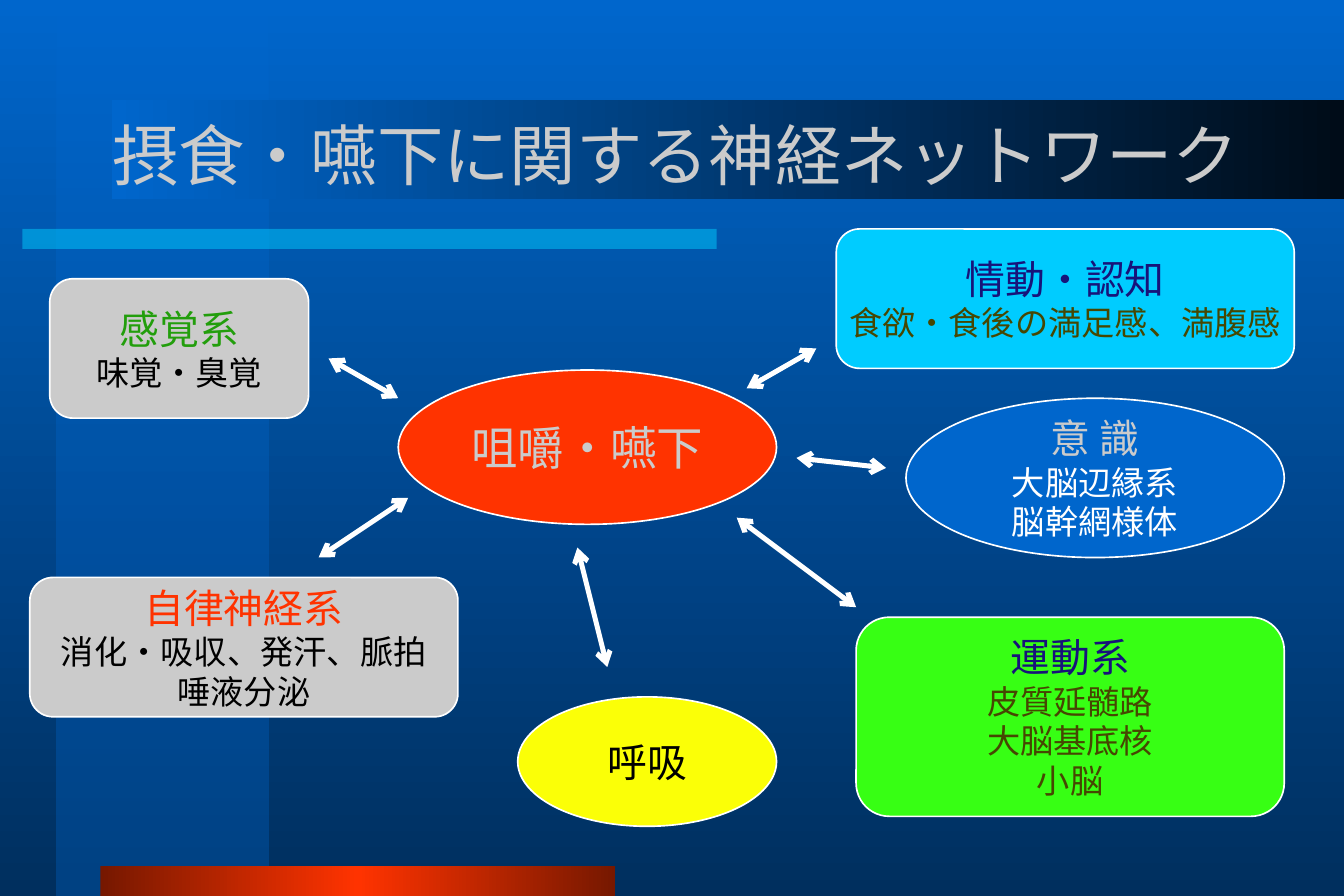
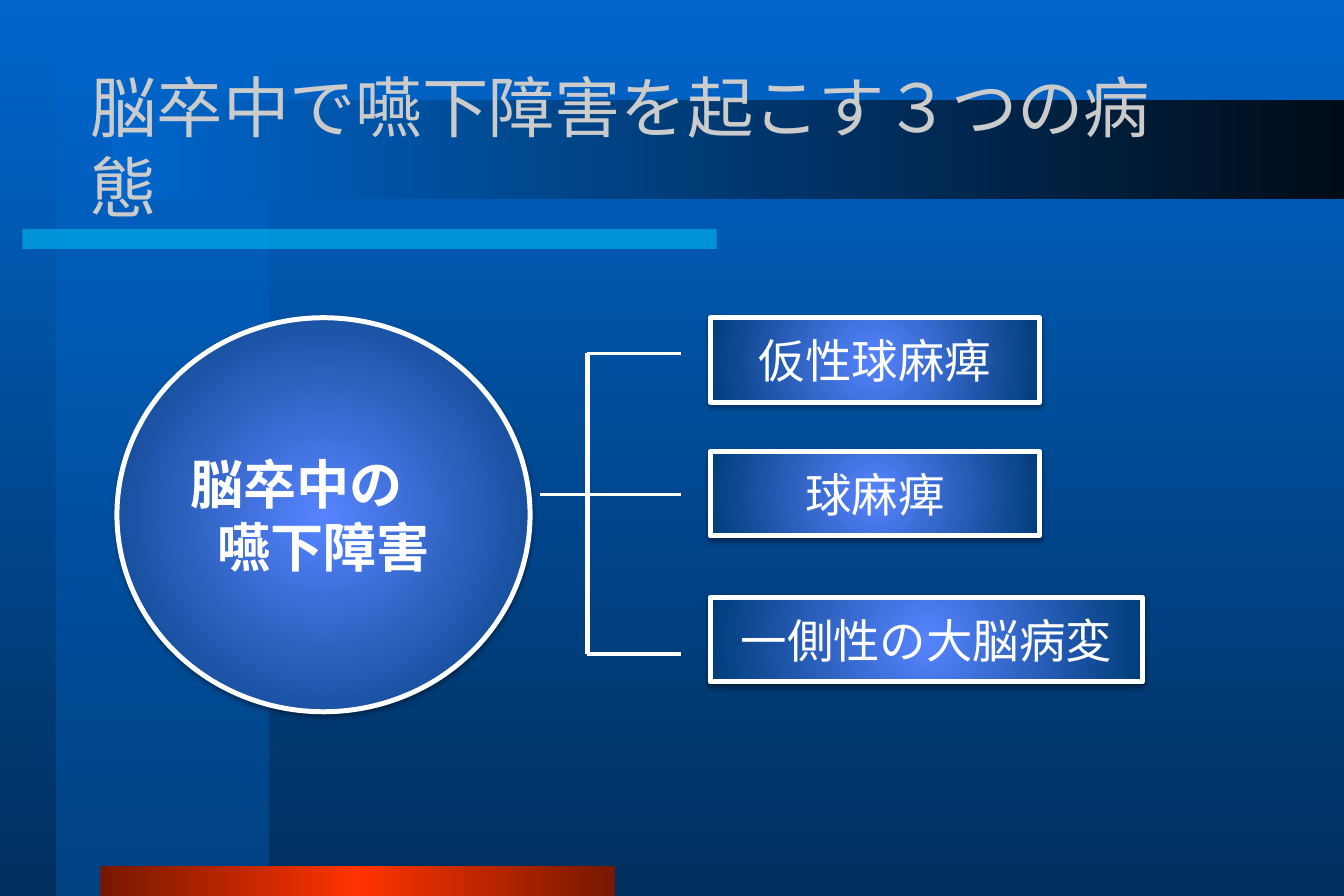
from dataclasses import dataclass

import lxml.etree
import pptx
import pptx.dml.color
import pptx.enum.shapes
import pptx.enum.text
import pptx.oxml.ns
import pptx.presentation
import pptx.shapes.autoshape
import pptx.slide
import pptx.util

Pt = pptx.util.Pt
qn = pptx.oxml.ns.qn
Kind = pptx.enum.shapes.MSO_SHAPE


@dataclass(frozen=True)
class Gradient:
    stops: tuple[tuple[int, str], ...]
    angle: int | None = 0  # None makes it radial
    alpha: int = 100


@dataclass(frozen=True)
class Theme:
    font: str = "Noto Sans CJK JP"
    title_size: float = 40
    stroke_size: float = 32
    label_size: float = 28
    heading_size: float = 24
    detail_size: float = 20
    white: str = "FFFFFF"
    black: str = "000000"
    grey: str = "CBCBCB"
    navy: str = "17137A"
    olive: str = "464702"
    forest: str = "229E0C"
    green: str = "37FF14"
    yellow: str = "FBFF07"
    red: str = "FF3300"
    blue: str = "0066CC"
    cyan: str = "00CCFF"
    background: Gradient = Gradient(((0, "0066CC"), (100, "002F5E")), 90)
    side_band: Gradient = Gradient(((0, "0066CC"), (100, "0053A6")), 90, 50)
    accent_line: Gradient = Gradient(((0, "00CCFF"), (100, "00CCFF")), 0, 50)
    foot_band: Gradient = Gradient(((0, "761800"), (50, "FF3300"), (100, "761800")))
    title_band: Gradient = Gradient(((0, "0066CC"), (100, "000C18")))
    glow: Gradient = Gradient(((0, "5784FF"), (100, "003C79")), None)


THEME = Theme()


@dataclass(frozen=True)
class Box:
    left: float
    top: float
    width: float
    height: float

    def lengths(self) -> tuple[pptx.util.Length, ...]:
        return tuple(Pt(v) for v in (self.left, self.top, self.width, self.height))


@dataclass(frozen=True)
class Line:
    text: str
    size: float
    color: str
    bold: bool = False


@dataclass(frozen=True)
class Node:
    kind: Kind
    box: Box
    fill: str | Gradient
    lines: tuple[Line, ...]
    border: float = 1
    wrap: bool = False
    shadow: bool = False


@dataclass(frozen=True)
class Link:
    start: tuple[float, float]
    end: tuple[float, float]
    width: float = 3
    arrows: bool = False


BANDS = (
    (Box(34, 0, 128, 540), THEME.side_band),
    (Box(13.5, 138, 418.5, 12), THEME.accent_line),
    (Box(60.5, 522, 310.5, 18), THEME.foot_band),
    (Box(67.5, 60, 742.5, 60), THEME.title_band),
)


def rgb(color: str) -> pptx.dml.color.RGBColor:
    return pptx.dml.color.RGBColor.from_string(color)


def add(parent: lxml.etree._Element, tag: str, **attributes: object) -> lxml.etree._Element:
    return lxml.etree.SubElement(parent, qn(tag), {k: str(v) for k, v in attributes.items()})


def apply_gradient(solid: lxml.etree._Element, gradient: Gradient) -> None:
    """Put a gradient in the place of a solid fill."""
    holder = solid.getparent()
    fill = add(holder, "a:gradFill", rotWithShape=1)
    holder.replace(solid, fill)
    stops = add(fill, "a:gsLst")
    for position, color in gradient.stops:
        stop = add(stops, "a:gs", pos=position * 1000)
        tint = add(stop, "a:srgbClr", val=color)
        if gradient.alpha < 100:
            add(tint, "a:alpha", val=gradient.alpha * 1000)
    if gradient.angle is None:
        radial = add(fill, "a:path", path="circle")
        add(radial, "a:fillToRect", l=50000, t=50000, r=50000, b=50000)
    else:
        add(fill, "a:lin", ang=gradient.angle * 60000, scaled=0)


def add_filled(slide: pptx.slide.Slide, kind: Kind, box: Box,
               fill: str | Gradient) -> pptx.shapes.autoshape.Shape:
    shape = slide.shapes.add_shape(kind, *box.lengths())
    shape.shadow.inherit = False
    shape.fill.solid()
    if isinstance(fill, Gradient):
        apply_gradient(shape._element.spPr.find(qn("a:solidFill")), fill)
    else:
        shape.fill.fore_color.rgb = rgb(fill)
    return shape


def write(shape: pptx.shapes.autoshape.Shape, lines: tuple[Line, ...], wrap: bool,
          align: pptx.enum.text.PP_ALIGN) -> None:
    frame = shape.text_frame
    frame.word_wrap = wrap
    frame.vertical_anchor = pptx.enum.text.MSO_ANCHOR.MIDDLE
    frame.text = "\n".join(line.text for line in lines)
    for paragraph, line in zip(frame.paragraphs, lines):
        paragraph.alignment = align
        paragraph.font.size = Pt(line.size)
        paragraph.font.bold = line.bold
        paragraph.font.color.rgb = rgb(line.color)
        paragraph.font.name = THEME.font
        add(paragraph._p.pPr.find(qn("a:defRPr")), "a:ea", typeface=THEME.font)


def add_node(slide: pptx.slide.Slide, node: Node) -> None:
    shape = add_filled(slide, node.kind, node.box, node.fill)
    shape.line.color.rgb = rgb(THEME.white)
    shape.line.width = Pt(node.border)
    if node.shadow:
        effects = shape._element.spPr.find(qn("a:effectLst"))
        outer = add(effects, "a:outerShdw", blurRad=Pt(3.1), dist=Pt(1.6),
                    dir=90 * 60000, rotWithShape=0)
        add(add(outer, "a:srgbClr", val=THEME.black), "a:alpha", val=38000)
    write(shape, node.lines, node.wrap, pptx.enum.text.PP_ALIGN.CENTER)


def add_link(slide: pptx.slide.Slide, link: Link) -> None:
    connector = slide.shapes.add_connector(
        pptx.enum.shapes.MSO_CONNECTOR.STRAIGHT, *(Pt(v) for v in link.start + link.end))
    connector.line.color.rgb = rgb(THEME.white)
    connector.line.width = Pt(link.width)
    if link.arrows:
        for tag in ("a:headEnd", "a:tailEnd"):
            add(connector.line._get_or_add_ln(), tag, type="arrow")
    add(connector._element.spPr, "a:effectLst")


def add_slide(deck: pptx.presentation.Presentation, title: str, title_box: Box,
              nodes: tuple[Node, ...], links: tuple[Link, ...]) -> None:
    slide = deck.slides.add_slide(deck.slide_layouts[6])
    for box, fill in BANDS:
        add_filled(slide, Kind.RECTANGLE, box, fill).line.fill.background()
    heading = slide.shapes.add_textbox(*title_box.lengths())
    write(heading, (Line(title, THEME.title_size, THEME.grey),), True,
          pptx.enum.text.PP_ALIGN.LEFT)
    for node in nodes:
        add_node(slide, node)
    for link in links:
        add_link(slide, link)


def system(kind: Kind, box: Box, fill: str, heading: str, heading_color: str,
           details: tuple[str, ...] = (), detail_color: str = THEME.black) -> Node:
    """A nervous system node: a heading with smaller detail lines."""
    lines = (Line(heading, THEME.heading_size, heading_color),
             *(Line(detail, THEME.detail_size, detail_color) for detail in details))
    return Node(kind, box, fill, lines)


def glowing(kind: Kind, box: Box, line: Line) -> Node:
    return Node(kind, box, THEME.glow, (line,), border=3, wrap=True, shadow=True)


def add_network_slide(deck: pptx.presentation.Presentation) -> None:
    rounded, oval = Kind.ROUNDED_RECTANGLE, Kind.OVAL
    nodes = (
        Node(oval, Box(240, 223, 228, 93), THEME.red,
             (Line("咀嚼・嚥下", THEME.label_size, THEME.grey),)),
        system(rounded, Box(504, 138, 276, 84), THEME.cyan, "情動・認知", THEME.navy,
               ("食欲・食後の満足感、満腹感",), THEME.olive),
        system(rounded, Box(18, 348, 258, 84), THEME.grey, "自律神経系", THEME.red,
               ("消化・吸収、発汗、脈拍", "唾液分泌")),
        system(rounded, Box(516, 372, 258, 120), THEME.green, "運動系", THEME.navy,
               ("皮質延髄路", "大脳基底核", "小脳"), THEME.olive),
        system(oval, Box(312, 420, 156, 78), THEME.yellow, "呼吸", THEME.black),
        system(rounded, Box(30, 168, 156, 84), THEME.grey, "感覚系", THEME.forest,
               ("味覚・臭覚",)),
        system(oval, Box(546, 240, 228, 96), THEME.blue, "意 識", THEME.grey,
               ("大脳辺縁系", "脳幹網様体"), THEME.white),
    )
    ends = (
        ((450, 234), (492, 210)),
        ((192, 336), (246, 300)),
        ((516, 366), (444, 312)),
        ((366, 402), (348, 330)),
        ((198, 216), (240, 240)),
        ((480, 276), (534, 282)),
    )
    add_slide(deck, "摂食・嚥下に関する神経ネットワーク", Box(60.5, 48, 719.5, 90), nodes,
              tuple(Link(start, end, arrows=True) for start, end in ends))


def add_stroke_slide(deck: pptx.presentation.Presentation) -> None:
    top, trunk, branch_end = 191.5, 354, 410.5
    conditions = (("仮性球麻痺", top, 198.5), ("球麻痺", 272, 198.5),
                  ("一側性の大脳病変", 360, 260.5))
    nodes = (
        *(glowing(Kind.RECTANGLE, Box(428, y, width, 51),
                  Line(name, THEME.label_size, THEME.white))
          for name, y, width in conditions),
        glowing(Kind.OVAL, Box(70.5, top, 249, 237.5),
                Line("脳卒中の　嚥下障害", THEME.stroke_size, THEME.white, bold=True)),
    )
    branches = ((trunk, 213), (trunk, 394), (325.5, 298))
    links = (Link((trunk, 213), (trunk, 394)),
             *(Link((x, y), (branch_end, y), 2.25) for x, y in branches))
    add_slide(deck, "脳卒中で嚥下障害を起こす３つの病態", Box(47.5, 43, 688.5, 90), nodes, links)


def main() -> None:
    deck = pptx.Presentation()
    deck.slide_width, deck.slide_height = Pt(810), Pt(540)
    master = deck.slide_master
    master.background.fill.solid()
    apply_gradient(master.element.find(f".//{qn('p:bgPr')}/{qn('a:solidFill')}"),
                   THEME.background)
    add_network_slide(deck)
    add_stroke_slide(deck)
    deck.save("out.pptx")


if __name__ == "__main__":
    main()
